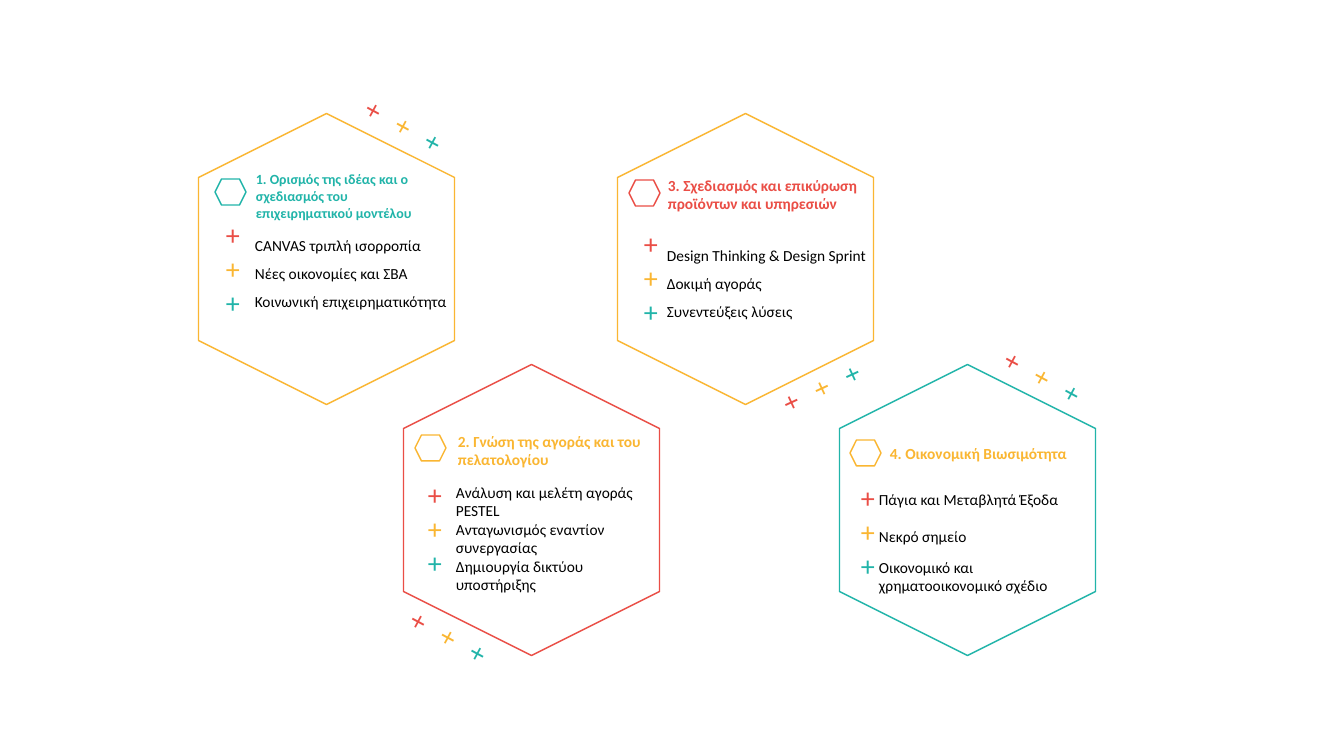
import dataclasses

import pptx
import pptx.dml.color
import pptx.enum.shapes
import pptx.enum.text
import pptx.util


@dataclasses.dataclass(frozen=True)
class Theme:
    font: str = "Calibri"
    red: str = "EA4E46"
    yellow: str = "FAB632"
    teal: str = "21B4A9"
    black: str = "000000"
    text: int = 11
    small_title: int = 10
    plus: int = 20
    line: int = 1


THEME = Theme()
PX_PER_INCH = 100.8
BIG_HEXAGON = (291, 256)
SMALL_HEXAGON = (31, 26)
PLUS_COLUMN = (30, 112)
PLUS_SLANT = (43, 112)

CARDS = [
    dict(
        title="1. Ορισμός της ιδέας και ο σχεδιασμός του επιχειρηματικού μοντέλου",
        title_box=(246, 166, 210, 61), title_size=THEME.small_title,
        accent=THEME.teal, outline=THEME.yellow,
        items=["CANVAS τριπλή ισορροπία", "Νέες οικονομίες και ΣΒΑ",
               "Κοινωνική επιχειρηματικότητα"],
        items_box=(245, 222, 227, 94), formats=[dict(line_spacing=1.5)] * 3,
        hexagon=(181, 131), icon=(215, 179), column=(216, 213),
        slant=(382, 66), angle=298.4,
    ),
    dict(
        title="2. Γνώση της αγοράς και του πελατολογίου",
        title_box=(448, 427, 212, 47), title_size=THEME.text,
        accent=THEME.yellow, outline=THEME.red,
        items=["Ανάλυση και μελέτη αγοράς PESTEL",
               "Ανταγωνισμός εναντίον συνεργασίας",
               "Δημιουργία δικτύου υποστήριξης"],
        items_box=(446, 478, 219, 122), formats=[{}] * 3,
        hexagon=(386, 382), icon=(415, 435), column=(418, 473),
        slant=(427, 577), angle=298.4,
    ),
    dict(
        title="3. Σχεδιασμός και επικύρωση προϊόντων και υπηρεσιών",
        title_box=(658, 171, 215, 47), title_size=THEME.text,
        accent=THEME.red, outline=THEME.yellow,
        items=["Design Thinking & Design Sprint", "Δοκιμή αγοράς",
               "Συνεντεύξεις λύσεις"],
        items_box=(657, 232, 264, 94), formats=[dict(line_spacing=1.5)] * 3,
        hexagon=(600, 131), icon=(629, 180), column=(634, 222),
        slant=(797, 329), angle=245.2,
    ),
    dict(
        title="4. Οικονομική Βιωσιμότητα",
        title_box=(880, 439, 233, 29), title_size=THEME.text,
        accent=THEME.yellow, outline=THEME.teal,
        items=["Πάγια και Μεταβλητά Έξοδα", "Νεκρό σημείο",
               "Οικονομικό και", "χρηματοοικονομικό σχέδιο"],
        items_box=(869, 467, 264, 134),
        formats=[dict(line_spacing=2.0), dict(line_spacing=2.0),
                 dict(space_before=pptx.util.Pt(8.5)), {}],
        hexagon=(822, 382), icon=(850, 440), column=(851, 476),
        slant=(1021, 317), angle=298.4,
    ),
]


def px(value):
    return round(value * pptx.util.Inches(1) / PX_PER_INCH)


def rgb(color):
    return pptx.dml.color.RGBColor.from_string(color)


def apply_format(target, values):
    for name, value in values.items():
        setattr(target, name, value)


def add_run(p, text, size, color, bold=False):
    r = p.add_run()
    r.text = text
    apply_format(r.font, dict(name=THEME.font, size=pptx.util.Pt(size), bold=bold))
    r.font.color.rgb = rgb(color)


def add_text_box(slide, box, rotation=0):
    sp = slide.shapes.add_textbox(*map(px, box))
    sp.rotation = rotation
    tf = sp.text_frame
    apply_format(tf, dict(
        word_wrap=True,
        auto_size=pptx.enum.text.MSO_AUTO_SIZE.SHAPE_TO_FIT_TEXT,
    ))
    return tf


def add_title(slide, box, text, size, color):
    tf = add_text_box(slide, box)
    add_run(tf.paragraphs[0], text, size, color, bold=True)


def add_items(slide, box, items, formats):
    tf = add_text_box(slide, box)
    for i, (item, values) in enumerate(zip(items, formats)):
        p = tf.add_paragraph() if i else tf.paragraphs[0]
        apply_format(p, values)
        add_run(p, item, THEME.text, THEME.black)


def add_pluses(slide, position, size, rotation=0):
    tf = add_text_box(slide, position + size, rotation)
    for color in (THEME.red, THEME.yellow, THEME.teal):
        add_run(tf.paragraphs[0], "+", THEME.plus, color)


def add_hexagon(slide, position, size, color, rotation=0):
    sp = slide.shapes.add_shape(
        pptx.enum.shapes.MSO_SHAPE.HEXAGON, *map(px, position + size))
    sp.rotation = rotation
    sp.shadow.inherit = False
    sp.fill.background()
    sp.line.color.rgb = rgb(color)
    sp.line.width = pptx.util.Pt(THEME.line)


def add_card(slide, card):
    add_items(slide, card["items_box"], card["items"], card["formats"])
    add_title(slide, card["title_box"], card["title"], card["title_size"], card["accent"])
    add_hexagon(slide, card["icon"], SMALL_HEXAGON, card["accent"])
    add_hexagon(slide, card["hexagon"], BIG_HEXAGON, card["outline"], 90)
    add_pluses(slide, card["column"], PLUS_COLUMN)
    add_pluses(slide, card["slant"], PLUS_SLANT, card["angle"])


def main():
    prs = pptx.Presentation()
    apply_format(prs, dict(slide_width=px(1344), slide_height=px(756)))
    slide = prs.slides.add_slide(prs.slide_layouts[6])
    for card in CARDS:
        add_card(slide, card)
    prs.save("out.pptx")


if __name__ == "__main__":
    main()
